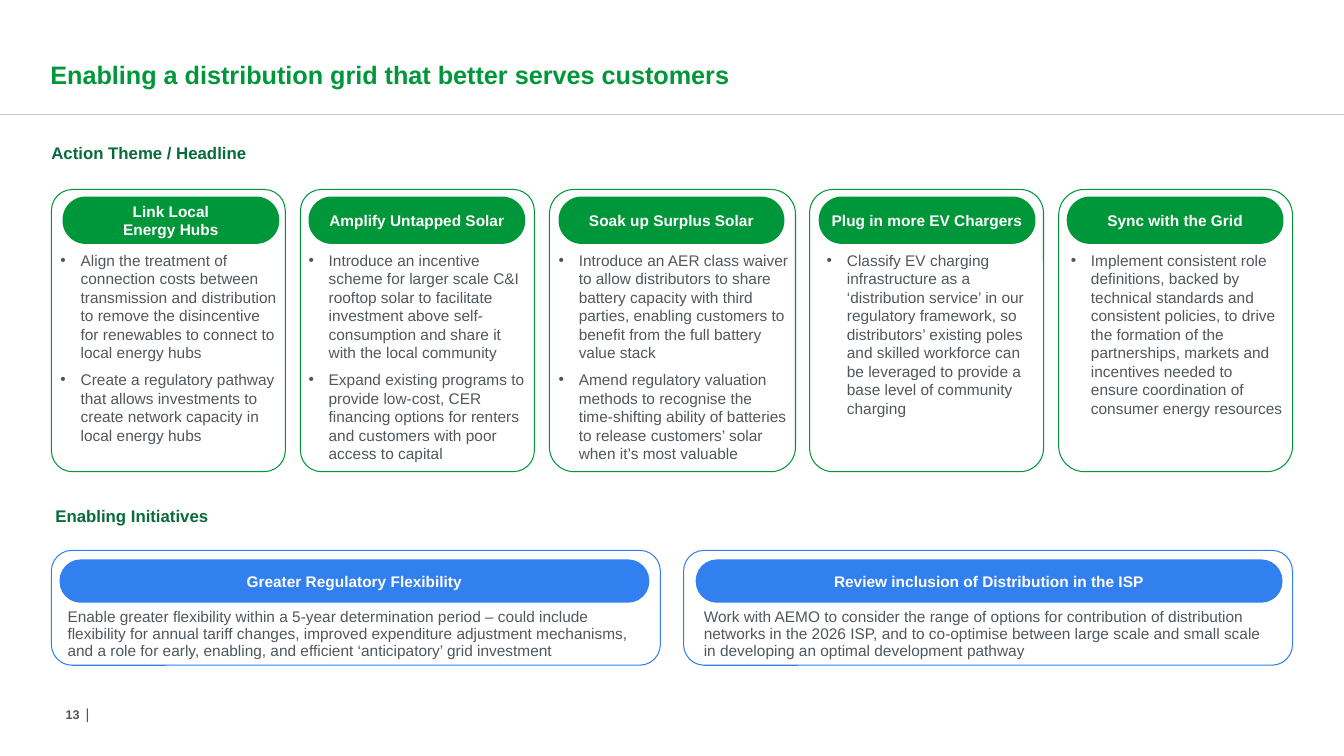
"""Build a slide of five action themes and two enabling initiatives."""
from dataclasses import dataclass

from lxml.etree import SubElement
from pptx import Presentation
from pptx.dml.color import RGBColor
from pptx.enum.shapes import MSO_CONNECTOR, MSO_SHAPE
from pptx.enum.text import MSO_ANCHOR as ANCHOR, MSO_AUTO_SIZE, PP_ALIGN as ALIGN
from pptx.oxml.ns import qn
from pptx.util import Inches, Pt


@dataclass(frozen=True)
class Theme:
    """Colours, font and type sizes of the slide."""
    font: str = "Arial"
    green: str = "00973A"
    dark_green: str = "076B3B"
    blue: str = "327FEF"
    grey: str = "50575C"
    rule: str = "C4CFC2"
    white: str = "FFFFFF"
    title: float = 18
    heading: float = 12
    body: float = 11
    bar: float = 10.5
    number: float = 9


class SlideBuilder:
    """Draw styled elements on one slide."""

    def __init__(self, slide, theme):
        self.slide = slide
        self.theme = theme

    def fill_text(self, frame, texts, size, color, bold=False, align=ALIGN.LEFT,
                  anchor=ANCHOR.TOP, insets=(0, 0, 0, 0), bullet=False, after=0, spacing=None):
        """Fill a text frame with formatted paragraphs."""
        frame.word_wrap = True
        frame.auto_size = MSO_AUTO_SIZE.NONE
        frame.vertical_anchor = anchor
        (frame.margin_left, frame.margin_top,
         frame.margin_right, frame.margin_bottom) = map(Inches, insets)
        for index, text in enumerate(texts):
            paragraph = frame.add_paragraph() if index else frame.paragraphs[0]
            paragraph.text = text
            paragraph.alignment = align
            paragraph.space_after = Pt(after)
            if spacing:
                paragraph.line_spacing = spacing
            if bullet:
                self.add_bullet(paragraph)
            for run in paragraph.runs:
                run.font.name = self.theme.font
                run.font.size = Pt(size)
                run.font.bold = bold
                run.font.color.rgb = RGBColor.from_string(color)

    def add_bullet(self, paragraph):
        """Give a paragraph a hanging bullet."""
        properties = paragraph._p.get_or_add_pPr()
        properties.set("marL", str(Inches(0.2)))
        properties.set("indent", str(-Inches(0.2)))
        SubElement(properties, qn("a:buFont"), typeface=self.theme.font)
        SubElement(properties, qn("a:buChar"), char="•")

    def title(self, text, box):
        """Place and format the title placeholder."""
        shape = self.slide.shapes.title
        shape.left, shape.top, shape.width, shape.height = map(Inches, box)
        self.fill_text(shape.text_frame, [text], self.theme.title, self.theme.green, bold=True,
                       anchor=ANCHOR.BOTTOM, insets=(0, 0.25, 0, 0))

    def text(self, texts, box, size, color, **style):
        """Add a text box."""
        shape = self.slide.shapes.add_textbox(*map(Inches, box))
        self.fill_text(shape.text_frame, texts, size, color, **style)

    def heading(self, text, box):
        """Add a section heading."""
        self.text([text], box, self.theme.heading, self.theme.dark_green, bold=True)

    def rounded(self, box, radius):
        """Add a rounded rectangle without shadow."""
        shape = self.slide.shapes.add_shape(MSO_SHAPE.ROUNDED_RECTANGLE, *map(Inches, box))
        shape.adjustments[0] = radius
        shape.shadow.inherit = False
        return shape

    def frame(self, box, color, radius):
        """Add an outlined card."""
        shape = self.rounded(box, radius)
        shape.fill.background()
        shape.line.color.rgb = RGBColor.from_string(color)
        shape.line.width = Pt(0.75)

    def pill(self, text, box, color):
        """Add a filled card header."""
        shape = self.rounded(box, 0.49)
        shape.fill.solid()
        shape.fill.fore_color.rgb = RGBColor.from_string(color)
        shape.line.fill.background()
        self.fill_text(shape.text_frame, [text], self.theme.body, self.theme.white, bold=True,
                       align=ALIGN.CENTER, anchor=ANCHOR.MIDDLE, insets=(0.04, 0, 0.04, 0))

    def rule(self, top, width):
        """Add a thin horizontal line."""
        line = self.slide.shapes.add_connector(
            MSO_CONNECTOR.STRAIGHT, Inches(0), Inches(top), Inches(width), Inches(top))
        line.line.color.rgb = RGBColor.from_string(self.theme.rule)
        line.line.width = Pt(0.5)
        SubElement(line._element.spPr, qn("a:effectLst"))


THEMES = [
    ("Link Local\nEnergy Hubs", 0.51, 2.32, 0.09, 0.62, 2.15, 0.6, 2.15, [
        "Align the treatment of connection costs between transmission and distribution to "
        "remove the disincentive for renewables to connect to local energy hubs",
        "Create a regulatory pathway that allows investments to create network capacity in "
        "local energy hubs"]),
    ("Amplify Untapped Solar", 2.98, 2.32, 0.09, 3.06, 2.15, 3.06, 2.15, [
        "Introduce an incentive scheme for larger scale C&I rooftop solar to facilitate "
        "investment above self-consumption and share it with the local community",
        "Expand existing programs to provide low-cost, CER financing options for renters "
        "and customers with poor access to capital"]),
    ("Soak up Surplus Solar", 5.45, 2.44, 0.1, 5.54, 2.24, 5.54, 2.28, [
        "Introduce an AER class waiver to allow distributors to share battery capacity with "
        "third parties, enabling customers to benefit from the full battery value stack",
        "Amend regulatory valuation methods to recognise the time-shifting ability of "
        "batteries to release customers’ solar when it’s most valuable"]),
    ("Plug in more EV Chargers", 8.03, 2.32, 0.1, 8.12, 2.15, 8.2, 2.07, [
        "Classify EV charging infrastructure as a ‘distribution service’ in our regulatory "
        "framework, so distributors’ existing poles and skilled workforce can be leveraged "
        "to provide a base level of community charging"]),
    ("Sync with the Grid", 10.5, 2.32, 0.11, 10.58, 2.15, 10.62, 2.11, [
        "Implement consistent role definitions, backed by technical standards and consistent "
        "policies, to drive the formation of the partnerships, markets and incentives needed "
        "to ensure coordination of consumer energy resources"]),
]

INITIATIVES = [
    ("Greater Regulatory Flexibility", 0.51, 0.59, 0.55, 5.85,
     "Enable greater flexibility within a 5-year determination period – could include "
     "flexibility for annual tariff changes, improved expenditure adjustment mechanisms, "
     "and a role for early, enabling, and efficient ‘anticipatory’ grid investment"),
    ("Review inclusion of Distribution in the ISP", 6.78, 6.9, 6.86, 5.82,
     "Work with AEMO to consider the range of options for contribution of distribution "
     "networks in the 2026 ISP, and to co-optimise between large scale and small scale in "
     "developing an optimal development pathway"),
]


def main():
    """Build and save the slide."""
    presentation = Presentation()
    presentation.slide_width = Inches(13.33)
    presentation.slide_height = Inches(7.5)
    theme = Theme()
    builder = SlideBuilder(
        presentation.slides.add_slide(presentation.slide_layouts[5]), theme)

    builder.rule(1.13, 13.33)
    builder.title("Enabling a distribution grid that better serves customers",
                  (0.5, 0.1, 12.32, 0.79))

    builder.heading("Action Theme / Headline", (0.51, 1.42, 3.68, 0.31))
    for name, left, width, radius, pill_left, pill_width, text_left, text_width, points in THEMES:
        builder.frame((left, 1.88, width, 2.8), theme.green, radius)
        builder.pill(name, (pill_left, 1.95, pill_width, 0.47), theme.green)
        builder.text(points, (text_left, 2.49, text_width, 1.9), theme.body, theme.grey,
                     bullet=True, after=6)

    builder.heading("Enabling Initiatives", (0.55, 5.02, 3.24, 0.37))
    for name, left, pill_left, text_left, width, summary in INITIATIVES:
        builder.frame((left, 5.46, 6.04, 1.14), theme.blue, 0.18)
        builder.pill(name, (pill_left, 5.55, width, 0.43), theme.blue)
        builder.text([summary], (text_left, 6, width, 0.59), theme.body, theme.grey,
                     anchor=ANCHOR.MIDDLE, insets=(0.12, 0, 0.08, 0), spacing=0.9)

    builder.text(["13"], (0.38, 6.99, 0.41, 0.19), theme.number, theme.grey, bold=True,
                 align=ALIGN.RIGHT, anchor=ANCHOR.MIDDLE)
    builder.text(["|"], (0.85, 6.94, 0.89, 0.23), theme.bar, theme.grey, anchor=ANCHOR.BOTTOM)
    presentation.save("out.pptx")


if __name__ == "__main__":
    main()
